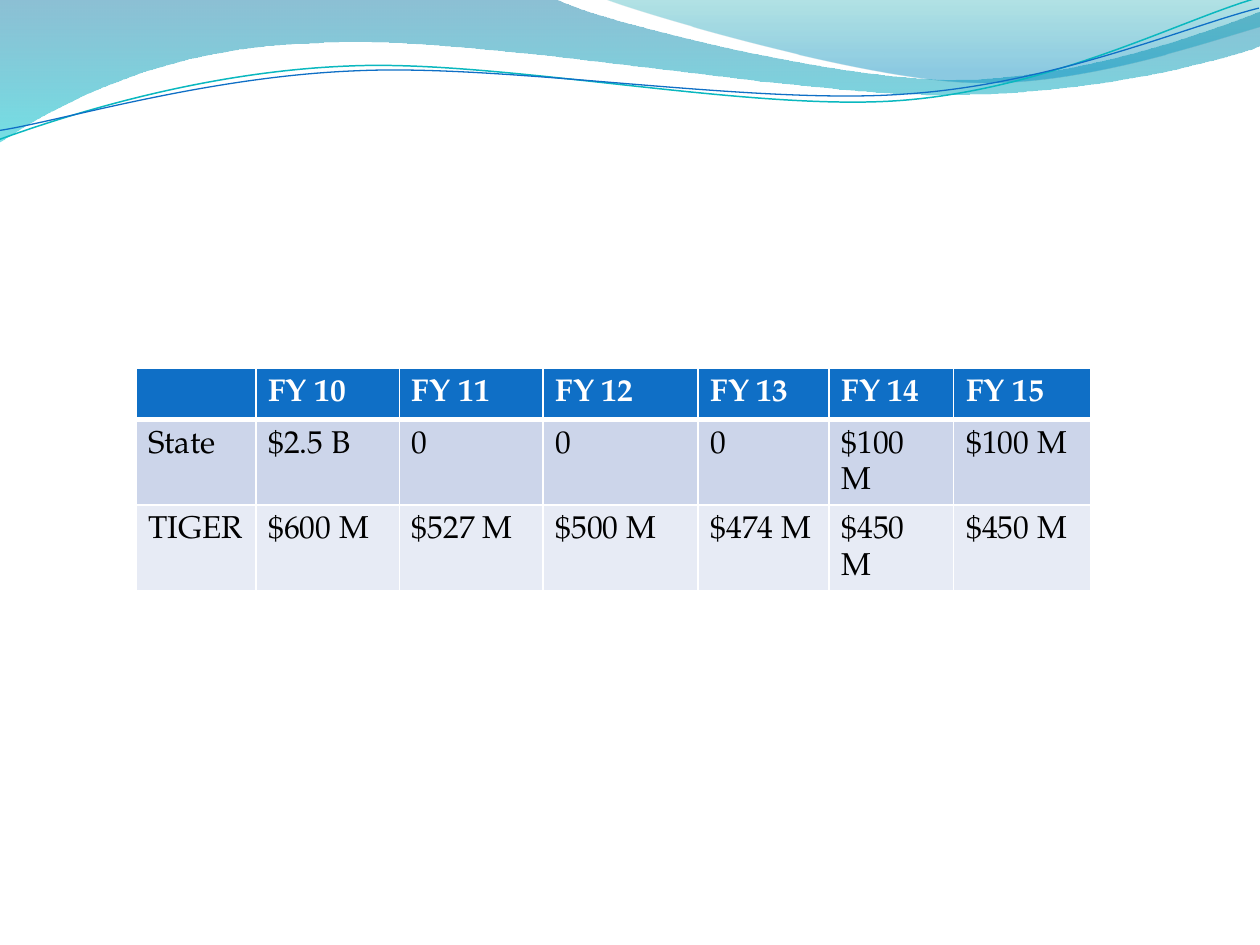
from lxml import etree
from pptx import Presentation
from pptx.dml.color import RGBColor
from pptx.oxml.ns import nsdecls, qn
from pptx.util import Inches, Pt


def rgb(hex_color):
    return RGBColor.from_string(hex_color)


def add_curve(shapes, start, segments, close):
    """Draw a path whose segments hold one point (line) or three (cubic Bézier)."""
    points = [(Inches(x), Inches(y))
              for x, y in [start, *(point for segment in segments for point in segment)]]
    builder = shapes.build_freeform(*points[0])
    builder.add_line_segments(points[1:], close=close)
    curve = builder.convert_to_shape()
    curve.shadow.inherit = False

    # Join every three line steps of a Bézier segment into one curve step
    steps = iter(list(curve._element.iter(qn("a:lnTo"))))
    for segment in segments:
        segment_steps = [next(steps) for _ in segment]
        if len(segment) == 3:
            bezier = etree.Element(qn("a:cubicBezTo"))
            segment_steps[0].addprevious(bezier)
            for step in segment_steps:
                bezier.append(step[0])
                step.getparent().remove(step)
    return curve


prs = Presentation()
prs.slide_width, prs.slide_height = Inches(10), Inches(7.5)
slide = prs.slides.add_slide(prs.slide_layouts[6])

# Waves: start, segments, gradient stops (position %, colour, opacity %)
waves = [
    ((0, 0),
     [[(4.4, -0.01)],
      [(4.76, 0.17), (6.64, 0.63), (7.58, 0.63)],
      [(8.53, 0.63), (9.58, 0.26), (10, 0.09)],
      [(10.01, 0.36)],
      [(9.83, 0.44), (8.7, 0.76), (7.46, 0.75)],
      [(6.22, 0.75), (3.82, 0.28), (2.57, 0.34)],
      [(1.29, 0.36), (0.46, 0.83), (-0.01, 1.13)],
      [(0, 0)]],
     [(0, "0074A1", 45), (100, "00C6CF", 55)]),
    ((4.79, -0.01),
     [[(5.09, 0.11), (6.82, 0.62), (7.69, 0.65)],
      [(8.56, 0.69), (9.61, 0.32), (10, 0.21)],
      [(10, 0)],
      [(4.79, -0.01)]],
     [(0, "00A1A9", 30), (80, "008BBF", 45)]),
]
for start, segments, stops in waves:
    wave = add_curve(slide.shapes, start, segments, close=True)
    wave.line.fill.background()
    stop_xml = "".join(
        f'<a:gs pos="{position * 1000}"><a:srgbClr val="{color}">'
        f'<a:alpha val="{opacity * 1000}"/></a:srgbClr></a:gs>'
        for position, color, opacity in stops)
    gradient = etree.fromstring(
        f'<a:gradFill {nsdecls("a")} rotWithShape="1"><a:gsLst>{stop_xml}</a:gsLst>'
        '<a:lin ang="5400000" scaled="0"/></a:gradFill>')
    wave._element.spPr.find(qn("a:custGeom")).addnext(gradient)

# Thin lines, given before their common tilt: start, segments, colour, width
ripples = [
    ((-0.02, 0.87),
     [[(0.47, 0.72), (1.58, 0.41), (2.77, 0.42)],
      [(3.96, 0.42), (5.91, 0.93), (7.12, 0.9)],
      [(8.32, 0.87), (9.4, 0.36), (10, 0.22)]],
     "0AB8BF", 0.85),
    ((-0.02, 0.8),
     [[(0.46, 0.75), (1.64, 0.45), (2.83, 0.46)],
      [(4.03, 0.46), (5.96, 0.88), (7.16, 0.85)],
      [(8.35, 0.83), (9.42, 0.42), (10.01, 0.3)]],
     "0F6FC6", 0.75),
]
for start, segments, color, width in ripples:
    ripple = add_curve(slide.shapes, start, segments, close=False)
    ripple.rotation = 357.3
    ripple.fill.background()
    ripple.line.color.rgb = rgb(color)
    ripple.line.width = Pt(width)

# Funding by fiscal year; the default table style supplies the inner white borders
funding = [
    ["", "FY 10", "FY 11", "FY 12", "FY 13", "FY 14", "FY 15"],
    ["State", "$2.5 B", "0", "0", "0", "$100 M", "$100 M"],
    ["TIGER", "$600 M", "$527 M", "$500 M", "$474 M", "$450 M", "$450 M"],
]
row_fills = ["0F6FC6", "CCD5EA", "E7EBF5"]
column_widths = [0.95, 1.14, 1.14, 1.23, 1.04, 0.99, 1.09]
header_borders = [("lnL", 1), ("lnR", 1), ("lnT", 1), ("lnB", 3)]

table = slide.shapes.add_table(
    len(funding), len(column_widths),
    Inches(1.08), Inches(2.92), Inches(7.58), Inches(1.33)).table
for column, width in zip(table.columns, column_widths):
    column.width = Inches(width)
for row_index, (values, fill) in enumerate(zip(funding, row_fills)):
    is_header = row_index == 0
    table.rows[row_index].height = Inches(0.41)
    for column_index, value in enumerate(values):
        cell = table.cell(row_index, column_index)
        cell.fill.solid()
        cell.fill.fore_color.rgb = rgb(fill)
        if is_header:
            for position, (side, width) in enumerate(header_borders):
                border = etree.fromstring(
                    f'<a:{side} {nsdecls("a")} w="{Pt(width)}"><a:solidFill>'
                    f'<a:srgbClr val="FFFFFF"/></a:solidFill></a:{side}>')
                cell._tc.tcPr.insert(position, border)
        if not value:
            continue
        paragraph = cell.text_frame.paragraphs[0]
        paragraph.text = value
        paragraph.line_spacing = 1.15
        paragraph.space_after = Pt(10)
        font = paragraph.runs[0].font
        font.name = "TeX Gyre Pagella"
        font.size = Pt(18)
        font.bold = is_header
        font.color.rgb = rgb("FFFFFF" if is_header else "000000")

prs.save("out.pptx")
